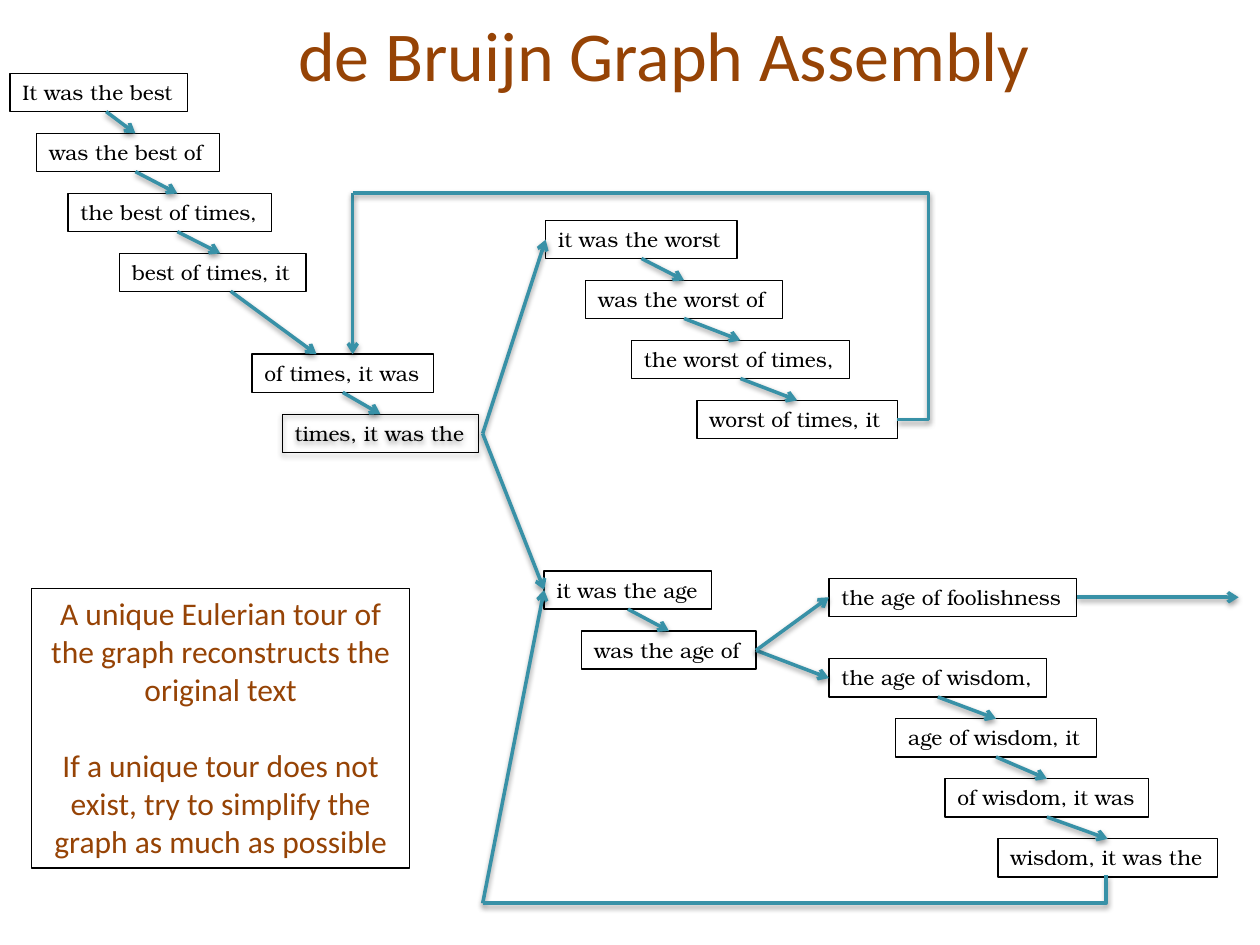
from itertools import pairwise

from lxml.etree import SubElement
from pptx import Presentation
from pptx.dml.color import RGBColor
from pptx.enum.shapes import MSO_CONNECTOR as Link, MSO_SHAPE as Preset
from pptx.enum.text import MSO_ANCHOR as Anchor, MSO_AUTO_SIZE as Fit, PP_ALIGN as Align
from pptx.oxml.ns import qn
from pptx.util import Cm, Pt

COLOURS = {"brown": "964305", "teal": "3891A7", "black": "000000"}
NODE_HEIGHT = 0.77
NODE_STEP = 1.21

# Each cascade: top, shift of its arrows from the node centres, (left, width, words)
CASCADES = [
    (1.48, 0.15, [(0.2, 3.58, "It was the best"),
                  (0.74, 3.68, "was the best of"),
                  (1.37, 4.11, "the best of times,"),
                  (2.41, 3.76, "best of times, it")]),
    (7.14, 0, [(5.08, 3.66, "of times, it was"),
               (5.69, 3.96, "times, it was the")]),
    (4.44, 0, [(11, 3.86, "it was the worst"),
               (11.81, 3.96, "was the worst of"),
               (12.73, 4.39, "the worst of times,"),
               (14.05, 4.04, "worst of times, it")]),
    (11.51, 0, [(10.97, 3.38, "it was the age"),
                (11.73, 3.51, "was the age of")]),
    (13.28, 0, [(16.71, 4.39, "the age of wisdom,"),
                (18.06, 4.04, "age of wisdom, it"),
                (19.05, 4.11, "of wisdom, it was"),
                (20.12, 4.42, "wisdom, it was the")]),
    (11.66, 0, [(16.71, 5, "the age of foolishness")]),
]
SHADED_NODE = "times, it was the"

# Points where several edges meet
FORK = (9.73, 8.74)
AGE_FORK = (15.24, 13.11)
AGE_ENTRY = (10.97, 11.89)
LOOP_TOP = (7.11, 3.89)
LOOP_BOTTOM = (9.73, 18.21)

ARROWS = [
    ((4.65, 5.87), (6.38, 7.14)),
    (FORK, (11, 4.83)),
    (FORK, AGE_ENTRY),
    (AGE_FORK, (16.71, 13.67)),
    (AGE_FORK, (16.71, 12.04)),
    (LOOP_TOP, (7.11, 7.14)),
    (LOOP_BOTTOM, AGE_ENTRY),
    ((21.72, 12.04), (24.97, 12.04)),
]
# Start, end, place of the bend as a share of the width
ELBOWS = [
    ((18.08, 8.46), LOOP_TOP, -0.058),
    (LOOP_BOTTOM, (22.3, 17.65), 1),
]


def colour(name):
    return RGBColor.from_string(COLOURS[name])


def apply(target, values):
    for name, value in values.items():
        setattr(target, name, value)


def add_shadow(item):
    effects = SubElement(item.element.spPr, qn("a:effectLst"))
    shadow = SubElement(effects, qn("a:outerShdw"), blurRad="40000", dist="20000",
                        dir="5400000", rotWithShape="0")
    black = SubElement(shadow, qn("a:srgbClr"), val=COLOURS["black"])
    SubElement(black, qn("a:alpha"), val="38000")


def write(box, paragraphs, font, size, tint, align, gap=0):
    for index, words in enumerate(paragraphs):
        para = box.text_frame.paragraphs[0] if index == 0 else box.text_frame.add_paragraph()
        apply(para, {"alignment": align, "space_before": Pt(gap if index else 0)})
        span = para.add_run()
        span.text = words
        apply(span.font, {"name": font, "size": Pt(size)})
        span.font.color.rgb = colour(tint)


def add_frame(shapes, left, top, width, height, shaded=False):
    box = shapes.add_shape(Preset.RECTANGLE, Cm(left), Cm(top), Cm(width), Cm(height))
    box.fill.background()
    box.line.color.rgb = colour("black")
    box.line.width = Pt(0.75)
    if shaded:
        add_shadow(box)
    else:
        box.shadow.inherit = False
    return box


def add_node(shapes, left, top, width, words):
    box = add_frame(shapes, left, top, width, NODE_HEIGHT, words == SHADED_NODE)
    apply(box.text_frame, {"word_wrap": False, "auto_size": Fit.SHAPE_TO_FIT_TEXT,
                           "vertical_anchor": Anchor.TOP})
    write(box, [words], "TeX Gyre Bonum", 12, "black", Align.LEFT)


def add_edge(shapes, start, end, bend=None):
    """A straight arrow, or a plain elbow when a bend is given."""
    kind = Link.STRAIGHT if bend is None else Link.ELBOW
    edge = shapes.add_connector(kind, *map(Cm, start + end))
    edge.line.color.rgb = colour("teal")
    edge.line.width = Pt(2)
    properties = edge.element.spPr
    if bend is None:
        SubElement(properties.find(qn("a:ln")), qn("a:tailEnd"), type="arrow")
    else:
        guides = properties.find(qn("a:prstGeom")).find(qn("a:avLst"))
        SubElement(guides, qn("a:gd"), name="adj1", fmla=f"val {round(bend * 100000)}")
    add_shadow(edge)


def add_cascade(page, top, shift, nodes):
    shapes = page.shapes.add_group_shape().shapes if len(nodes) > 1 else page.shapes
    centres = []
    for index, (left, width, words) in enumerate(nodes):
        node_top = top + index * NODE_STEP
        add_node(shapes, left, node_top, width, words)
        centres.append((left + width / 2 + shift, node_top))
    for (x, y), target in pairwise(centres):
        add_edge(shapes, (x, y + NODE_HEIGHT), target)


def add_title(page, words):
    box = page.shapes.add_textbox(Cm(1.96), Cm(0.23), Cm(22.86), Cm(1.7))
    apply(box.text_frame, {"word_wrap": True, "vertical_anchor": Anchor.MIDDLE})
    write(box, [words], "Calibri", 40, "brown", Align.CENTER)


def add_note(page, paragraphs):
    box = add_frame(page.shapes, 0.64, 11.86, 7.62, 5.64)
    apply(box.text_frame, {"word_wrap": True, "vertical_anchor": Anchor.TOP})
    write(box, paragraphs, "Calibri", 18, "brown", Align.CENTER, gap=22)


def main():
    deck = Presentation()
    apply(deck, {"slide_width": Cm(25.4), "slide_height": Cm(19.05)})
    page = deck.slides.add_slide(deck.slide_layouts[6])

    add_title(page, "de Bruijn Graph Assembly")

    # Chains of overlapping words
    for top, shift, nodes in CASCADES:
        add_cascade(page, top, shift, nodes)

    # Edges between the chains
    for start, end in ARROWS:
        add_edge(page.shapes, start, end)
    for start, end, bend in ELBOWS:
        add_edge(page.shapes, start, end, bend)

    add_note(page, [
        "A unique Eulerian tour of the graph reconstructs the original text",
        "If a unique tour does not exist, try to simplify the graph as much as possible",
    ])
    deck.save("out.pptx")


if __name__ == "__main__":
    main()
